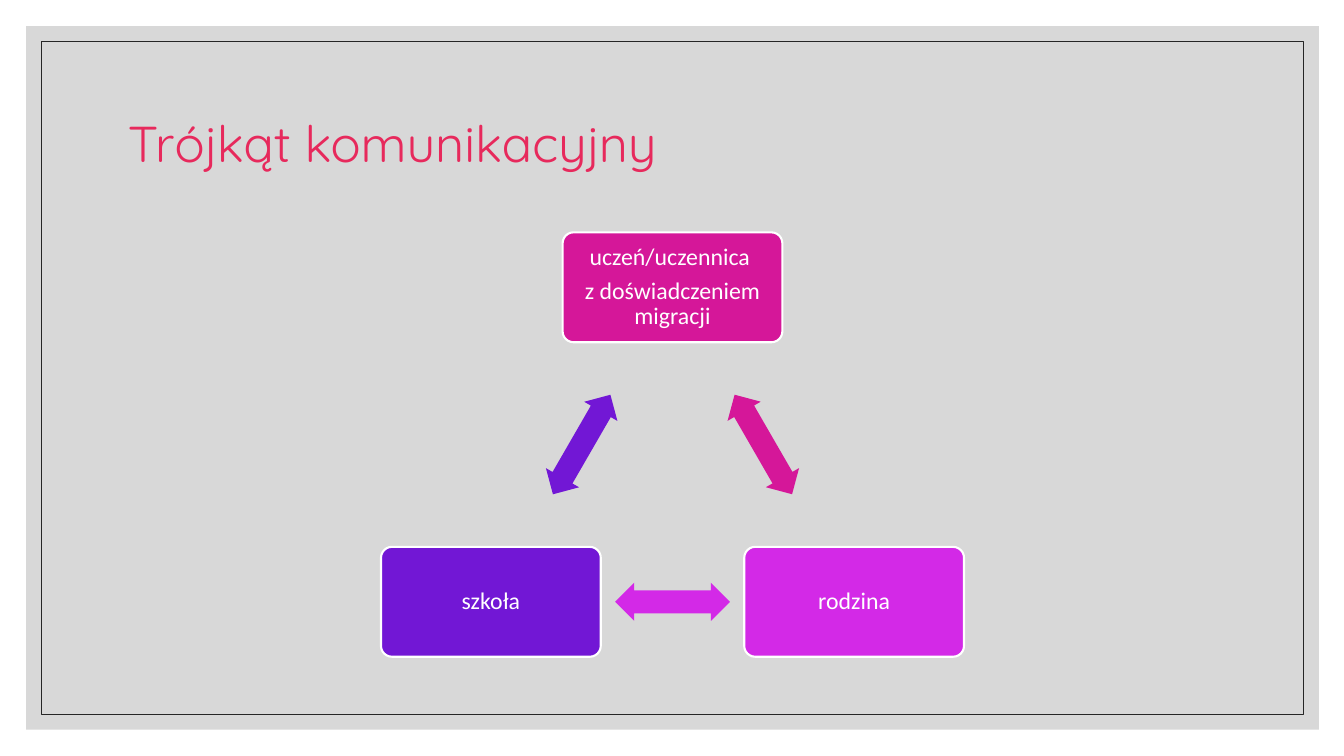
import dataclasses
import math

import pptx
import pptx.dml.color
import pptx.enum.shapes
import pptx.enum.text
import pptx.oxml.ns
import pptx.util
from lxml import etree

SHAPES = pptx.enum.shapes.MSO_SHAPE
ALIGN = pptx.enum.text.PP_ALIGN
MIDDLE = pptx.enum.text.MSO_ANCHOR.MIDDLE


@dataclasses.dataclass(frozen=True)
class Theme:
    panel: str = "BFBFBF"
    frame: str = "262626"
    title: str = "E7295C"
    light: str = "FFFFFF"
    pupil: str = "D51799"
    family: str = "D329E7"
    school: str = "7217D5"
    title_font: str = "Quicksand"
    body_font: str = "Calibri"
    title_size: int = 36
    body_size: int = 17


class SlideBuilder:
    EMU_PER_PX = 9144  # 100 px to the inch

    def __init__(self, deck, theme):
        self.theme = theme
        self.page = deck.slides.add_slide(deck.slide_layouts[6])

    @classmethod
    def px(cls, length):
        return pptx.util.Emu(round(length * cls.EMU_PER_PX))

    def shape(self, kind, left, top, width, height, fill=None, line=None, weight=1.0, alpha=None):
        box = self.page.shapes.add_shape(kind, *map(self.px, (left, top, width, height)))
        box.shadow.inherit = False
        if fill:
            box.fill.solid()
            box.fill.fore_color.rgb = pptx.dml.color.RGBColor.from_string(fill)
        else:
            box.fill.background()
        if line:
            box.line.color.rgb = pptx.dml.color.RGBColor.from_string(line)
            box.line.width = pptx.util.Pt(weight)
        else:
            box.line.fill.background()
        if alpha is not None:
            color = next(box.element.iter(pptx.oxml.ns.qn("a:srgbClr")))
            etree.SubElement(color, pptx.oxml.ns.qn("a:alpha"), val=str(alpha * 1000))
        return box

    def set_text(self, box, text, font, size, color, align, gap=0):
        frame = box.text_frame
        frame.word_wrap = True
        frame.vertical_anchor = MIDDLE
        frame.text = text
        for para in frame.paragraphs:
            para.alignment = align
            para.line_spacing = 0.9
            para.space_after = pptx.util.Pt(gap)
            for span in para.runs:
                span.font.name = font
                span.font.size = pptx.util.Pt(size)
                span.font.color.rgb = pptx.dml.color.RGBColor.from_string(color)

    def title(self, text, left, top, width, height):
        box = self.page.shapes.add_textbox(*map(self.px, (left, top, width, height)))
        theme = self.theme
        self.set_text(box, text, theme.title_font, theme.title_size, theme.title, ALIGN.LEFT)

    def node(self, text, center, width, height, fill):
        left, top = center[0] - width / 2, center[1] - height / 2
        theme = self.theme
        box = self.shape(SHAPES.ROUNDED_RECTANGLE, left, top, width, height, fill, theme.light, 1.5)
        box.adjustments[0] = 0.1
        frame = box.text_frame
        frame.margin_left = frame.margin_right = self.px(7)
        frame.margin_top = frame.margin_bottom = self.px(7)
        self.set_text(box, text, theme.body_font, theme.body_size, theme.light, ALIGN.CENTER, gap=6)

    def double_arrow(self, start, end, length, thickness, fill):
        left = (start[0] + end[0] - length) / 2
        top = (start[1] + end[1] - thickness) / 2
        arrow = self.shape(SHAPES.LEFT_RIGHT_ARROW, left, top, length, thickness, fill)
        arrow.adjustments[0] = 0.6
        arrow.adjustments[1] = 0.5
        arrow.rotation = round(math.degrees(math.atan2(end[1] - start[1], end[0] - start[0]))) % 360


def main():
    deck = pptx.Presentation()
    deck.slide_width = SlideBuilder.px(1333)
    deck.slide_height = SlideBuilder.px(750)
    theme = Theme()
    slide = SlideBuilder(deck, theme)

    # Background panel and thin frame
    slide.shape(SHAPES.RECTANGLE, 26, 26, 1282, 698, fill=theme.panel, alpha=60)
    slide.shape(SHAPES.RECTANGLE, 41, 41, 1252, 668, line=theme.frame, weight=0.5)

    # Title
    slide.title("Trójkąt komunikacyjny", 117, 70, 1100, 150)

    # Triangle: each node is followed by the arrow to the next one
    center_x, center_y, radius = 667, 493, 208
    nodes = [
        ("uczeń/uczennica \nz doświadczeniem migracji", theme.pupil),
        ("rodzina", theme.family),
        ("szkoła", theme.school),
    ]
    corners = []
    for index in range(len(nodes)):
        angle = math.radians(360 / len(nodes) * index - 90)
        corners.append((center_x + radius * math.cos(angle), center_y + radius * math.sin(angle)))
    for index, (text, color) in enumerate(nodes):
        following = corners[(index + 1) % len(corners)]
        slide.node(text, corners[index], 218, 109, color)
        slide.double_arrow(corners[index], following, 114, 38, color)

    deck.save("out.pptx")


if __name__ == "__main__":
    main()
